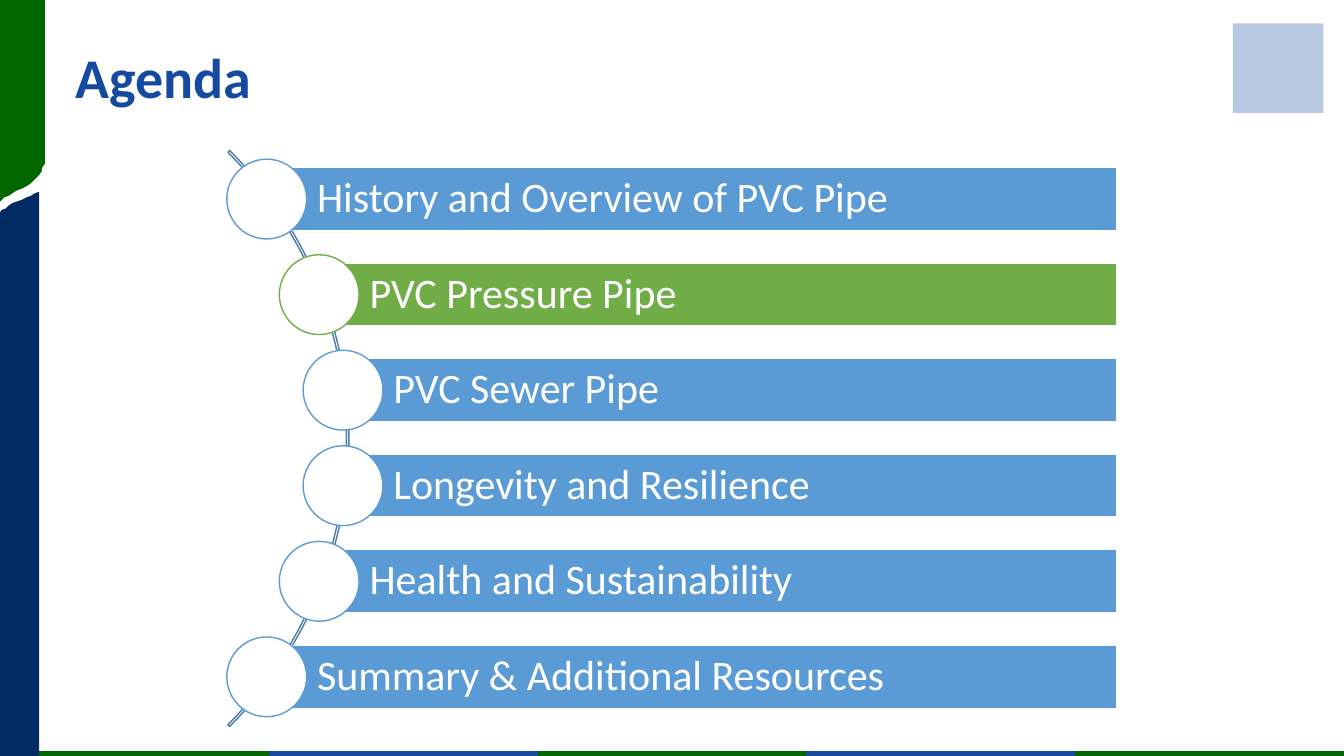
from dataclasses import dataclass

from pptx import Presentation
from pptx.dml.color import RGBColor
from pptx.enum.shapes import MSO_CONNECTOR, MSO_SHAPE
from pptx.enum.text import MSO_ANCHOR, MSO_AUTO_SIZE, PP_ALIGN
from pptx.oxml.ns import qn
from pptx.shapes.autoshape import Shape
from pptx.slide import Slide
from pptx.text.text import TextFrame
from pptx.util import Pt
from lxml.etree import SubElement

COLORS = {
    "green": "006600",
    "blue": "164AA0",
    "navy": "002A64",
    "topic": "5B9BD5",
    "current": "70AD47",
    "arc": "497CAB",
    "emblem": "B9C8E3",
    "white": "FFFFFF",
}
FONT = "Calibri"
BAR_RIGHT = 797.5
BAR_HEIGHT = 45
FIRST_CENTER = 142.2
TOPIC_PITCH = 68.25
DOT_SIZE = 57
STRIPE_COUNT = 5
STRIPE_WIDTH = 192
STRIPE_Y = 538


@dataclass
class Topic:
    label: str
    left: float
    color: str = "topic"


@dataclass
class SidePanel:
    color: str
    points: list[tuple[float, float]]


TOPICS = [
    Topic("History and Overview of PVC Pipe", 190.5),
    Topic("PVC Pressure Pipe", 228, "current"),
    Topic("PVC Sewer Pipe", 245),
    Topic("Longevity and Resilience", 245),
    Topic("Health and Sustainability", 228),
    Topic("Summary & Additional Resources", 190.5),
]
SIDE_PANELS = [
    SidePanel("green", [
        (31.7, 115.2), (31.7, 0), (0, 0), (0, 144), (0.7, 143.3), (2.9, 141.1),
        (5.8, 139.7), (8.6, 138.2), (11.5, 136.1), (15.1, 134.6), (18.7, 133.2),
        (21.6, 131), (23.8, 128.9), (25.9, 126.7), (28.1, 124.6), (29.5, 122.4),
        (30.2, 120.2), (31.7, 117.4),
    ]),
    SidePanel("navy", [
        (28, 540), (28, 136.8), (25.2, 138.2), (22.3, 139.7), (18.7, 141.1),
        (15.1, 142.6), (11.5, 144), (8.6, 145.4), (5.8, 147), (3.6, 149),
        (1.4, 150.5), (0, 152), (0, 540),
    ]),
]


def color_of(name: str) -> RGBColor:
    return RGBColor.from_string(COLORS[name])


def paint(shape: Shape, fill: str | None, line: str | None) -> None:
    shape.shadow.inherit = False
    if fill:
        shape.fill.solid()
        shape.fill.fore_color.rgb = color_of(fill)
    else:
        shape.fill.background()
    if line:
        shape.line.color.rgb = color_of(line)
        shape.line.width = Pt(1)
    else:
        shape.line.fill.background()


def add_preset(page: Slide, preset: MSO_SHAPE, left: float, top: float, width: float,
               height: float, fill: str | None, line: str | None) -> Shape:
    shape = page.shapes.add_shape(preset, Pt(left), Pt(top), Pt(width), Pt(height))
    paint(shape, fill, line)
    return shape


def write(frame: TextFrame, text: str, size: float, color: str, bold: bool) -> None:
    frame.text = text
    frame.word_wrap = True
    frame.auto_size = MSO_AUTO_SIZE.NONE
    frame.vertical_anchor = MSO_ANCHOR.MIDDLE
    para = frame.paragraphs[0]
    para.alignment = PP_ALIGN.LEFT
    para.line_spacing = 0.9
    font = para.runs[0].font
    font.name = FONT
    font.size = Pt(size)
    font.bold = bold
    font.color.rgb = color_of(color)


def add_stripe(page: Slide, index: int) -> None:
    left = index * STRIPE_WIDTH
    stripe = page.shapes.add_connector(
        MSO_CONNECTOR.STRAIGHT, Pt(left), Pt(STRIPE_Y), Pt(left + STRIPE_WIDTH), Pt(STRIPE_Y))
    stripe.line.color.rgb = color_of("blue" if index % 2 else "green")
    stripe.line.width = Pt(3.75)
    SubElement(stripe._element.spPr, qn("a:effectLst"))


def add_side_panel(page: Slide, panel: SidePanel) -> None:
    start, *others = panel.points
    builder = page.shapes.build_freeform(*start, scale=Pt(1))
    builder.add_line_segments(others, close=True)
    paint(builder.convert_to_shape(), panel.color, None)


def add_arc(page: Slide) -> None:
    arc = add_preset(page, MSO_SHAPE.BLOCK_ARC, -332.6, 22.3, 581.8, 581.8, None, "arc")
    for index, value in enumerate((189, 27, 0.003)):
        arc.adjustments[index] = value


def add_topic(page: Slide, topic: Topic, center: float) -> None:
    bar = add_preset(page, MSO_SHAPE.RECTANGLE, topic.left, center - BAR_HEIGHT / 2,
                     BAR_RIGHT - topic.left, BAR_HEIGHT, topic.color, "white")
    frame = bar.text_frame
    write(frame, topic.label, 30, "white", False)
    frame.margin_left = Pt(36)
    frame.margin_right = frame.margin_top = frame.margin_bottom = Pt(6)
    add_preset(page, MSO_SHAPE.OVAL, topic.left - DOT_SIZE / 2, center - DOT_SIZE / 2,
               DOT_SIZE, DOT_SIZE, "white", topic.color)


def main() -> None:
    deck = Presentation()
    deck.slide_width, deck.slide_height = Pt(960), Pt(540)
    page = deck.slides.add_slide(deck.slide_layouts.get_by_name("Title Only"))

    title = page.shapes.title
    title.left, title.top, title.width, title.height = Pt(46.8), Pt(10), Pt(832), Pt(94.3)
    write(title.text_frame, "Agenda", 40, "blue", True)

    for index in range(STRIPE_COUNT):
        add_stripe(page, index)
    for panel in SIDE_PANELS:
        add_side_panel(page, panel)
    add_preset(page, MSO_SHAPE.RECTANGLE, 880.6, 16.6, 64.8, 64.1, "emblem", None)

    add_arc(page)
    for index, topic in enumerate(TOPICS):
        add_topic(page, topic, FIRST_CENTER + index * TOPIC_PITCH)

    deck.save("out.pptx")


if __name__ == "__main__":
    main()
